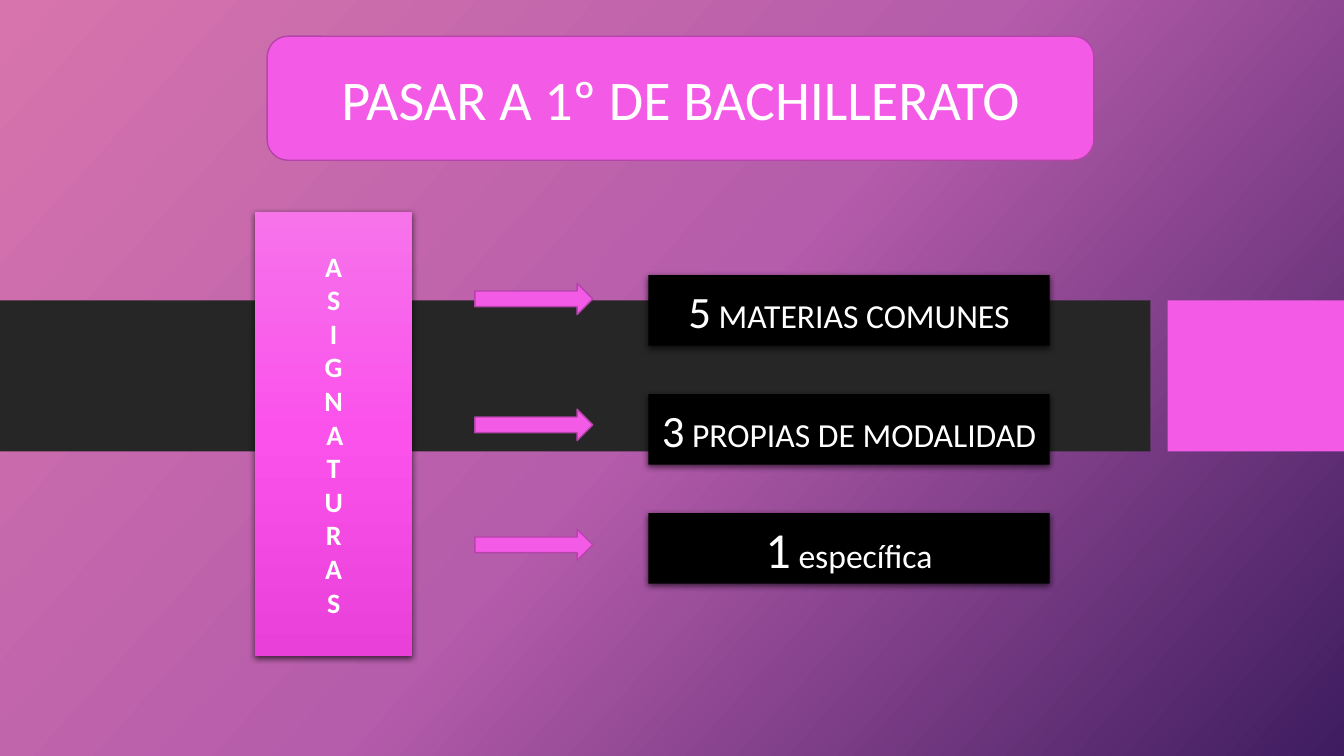
from copy import deepcopy

from lxml import etree
from pptx import Presentation
from pptx import util as u
from pptx.dml.color import RGBColor
from pptx.enum import shapes, text
from pptx.oxml import ns

WHITE = RGBColor(0xFF, 0xFF, 0xFF)
BLACK = RGBColor(0x00, 0x00, 0x00)
CHARCOAL = RGBColor(0x26, 0x26, 0x26)
PINK = RGBColor(0xF3, 0x5A, 0xE6)
PURPLE = RGBColor(0xB4, 0x43, 0xAA)
BACKGROUND_COLORS = [RGBColor(0xD7, 0x74, 0xAD), RGBColor(0xB5, 0x5C, 0xAB), RGBColor(0x3E, 0x1C, 0x5F)]
BANNER_COLORS = [RGBColor(0xF6, 0x73, 0xEA), RGBColor(0xFB, 0x52, 0xEC), RGBColor(0xE8, 0x40, 0xD9)]
SHADOW_XML = (
    f'<a:outerShdw {ns.nsdecls("a")} blurRad="57150" dist="19050" dir="5400000" algn="ctr" rotWithShape="0">'
    '<a:srgbClr val="000000"><a:alpha val="63000"/></a:srgbClr></a:outerShdw>'
)


def paint_gradient(owner, fill, colors, clockwise_angle):
    fill.gradient()
    fill.gradient_angle = 360 - clockwise_angle
    stop_list = owner.element.find(".//" + ns.qn("a:gsLst"))
    stop_list.append(deepcopy(stop_list[0]))
    for stop, color, position in zip(fill.gradient_stops, colors, (0, 0.5, 1)):
        stop.color.rgb = color
        stop.position = position


def add_box(kind, left, top, width, height, color, outline=None, shadow=False, runs=(), bold=False):
    shape = slide.shapes.add_shape(kind, u.Inches(left), u.Inches(top), u.Inches(width), u.Inches(height))
    shape.fill.solid()
    shape.fill.fore_color.rgb = color
    if outline is None:
        shape.line.fill.background()
    else:
        shape.line.color.rgb = outline
        shape.line.width = u.Pt(1)
    shape.shadow.inherit = False
    if shadow:
        effects = shape.element.spPr.find(ns.qn("a:effectLst"))
        effects.append(etree.fromstring(SHADOW_XML))
    if runs:
        frame = shape.text_frame
        frame.word_wrap = True
        frame.vertical_anchor = text.MSO_ANCHOR.MIDDLE
        paragraph = frame.paragraphs[0]
        paragraph.alignment = text.PP_ALIGN.CENTER
        paragraph.font.name = "Calibri"
        paragraph.font.color.rgb = WHITE
        paragraph.font.bold = bold
        for words, size in runs:
            run = paragraph.add_run()
            run.text = words
            run.font.size = u.Pt(size)
    return shape


presentation = Presentation()
presentation.slide_width = u.Inches(13.33)
presentation.slide_height = u.Inches(7.5)
slide = presentation.slides.add_slide(presentation.slide_layouts[6])
paint_gradient(slide, slide.background.fill, BACKGROUND_COLORS, 42)

RECTANGLE = shapes.MSO_SHAPE.RECTANGLE
add_box(RECTANGLE, 0, 2.98, 11.41, 1.5, CHARCOAL)
add_box(RECTANGLE, 11.58, 2.98, 1.75, 1.5, PINK)
add_box(shapes.MSO_SHAPE.ROUNDED_RECTANGLE, 2.65, 0.36, 8.2, 1.23, PINK, outline=PURPLE,
        runs=[("PASAR A 1º DE BACHILLERATO", 40)])

banner = add_box(RECTANGLE, 2.53, 2.1, 1.56, 4.41, PINK, shadow=True,
                 runs=[("ASIGNATURAS", 20)], bold=True)
paint_gradient(banner, banner.fill, BANNER_COLORS, 90)
banner.text_frame._txBody.bodyPr.set("vert", "wordArtVert")

subjects = [
    (2.81, "5", 32, " MATERIAS COMUNES"),
    (4.06, "3", 32, " PROPIAS DE MODALIDAD"),
    (5.25, "1", 36, " específica"),
]
for index, (arrow_top, count, count_size, label) in enumerate(subjects):
    add_box(shapes.MSO_SHAPE.RIGHT_ARROW, 4.71, arrow_top, 1.17, 0.31, PINK, outline=PURPLE)
    add_box(RECTANGLE, 6.43, 2.73 + index * 1.18, 3.98, 0.7, BLACK, shadow=True,
            runs=[(count, count_size), (label, 24)])

presentation.save("out.pptx")
